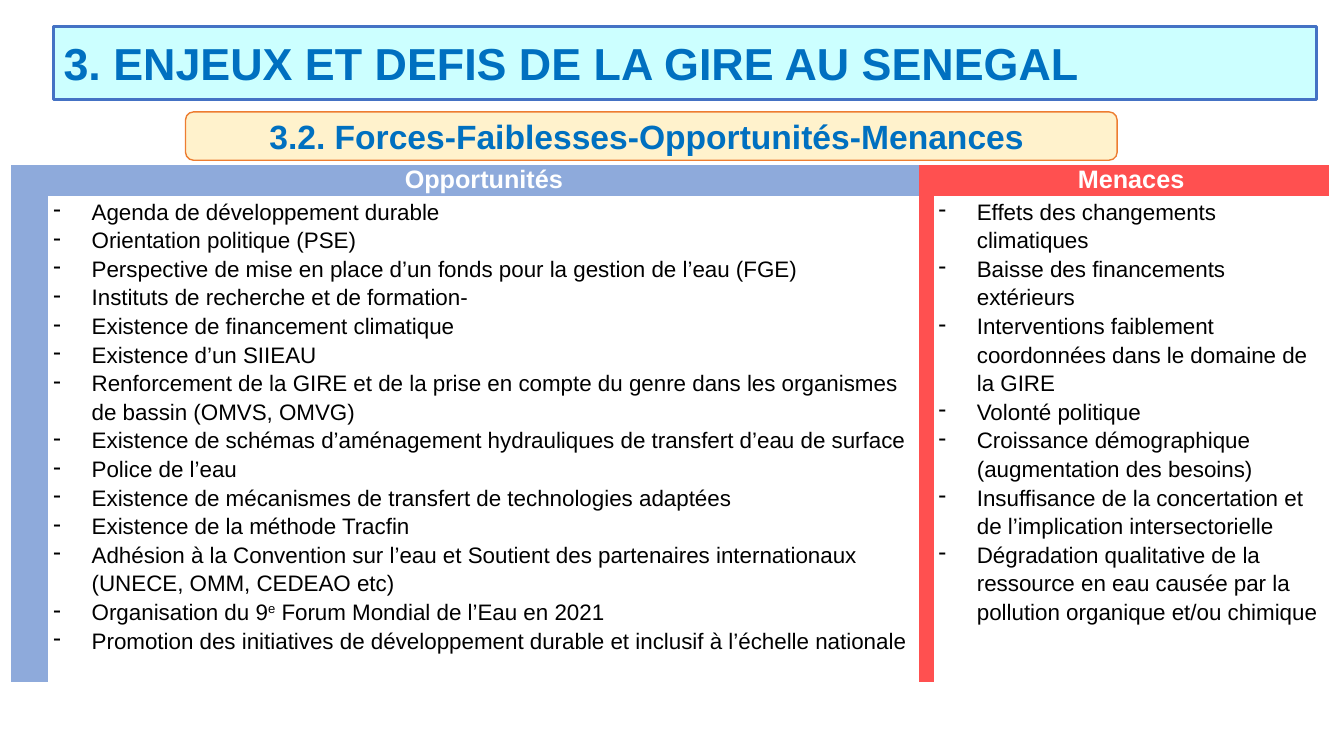
import pptx
import pptx.util
import pptx.dml.color
import pptx.enum.shapes
import pptx.enum.text
import pptx.oxml
import pptx.oxml.ns
from pptx.util import Inches

RGBColor = pptx.dml.color.RGBColor
PP_ALIGN = pptx.enum.text.PP_ALIGN
MIDDLE = pptx.enum.text.MSO_ANCHOR.MIDDLE

BLACK = RGBColor(0x00, 0x00, 0x00)
WHITE = RGBColor(0xFF, 0xFF, 0xFF)
TITLE_BLUE = RGBColor(0x00, 0x70, 0xC0)
PALE_CYAN = RGBColor(0xCC, 0xFF, 0xFF)
EDGE_BLUE = RGBColor(0x44, 0x72, 0xC4)
CREAM = RGBColor(0xFF, 0xF2, 0xCC)
ORANGE = RGBColor(0xED, 0x7D, 0x31)
OPPORTUNITY_BLUE = RGBColor(0x8E, 0xAA, 0xDB)
THREAT_RED = RGBColor(0xFF, 0x50, 0x50)

NO_STYLE = "{2D5ABB26-0587-4C30-8999-92F81FD0307C}"
COLUMN_WIDTHS = (0.37, 8.64, 0.12, 3.92)
ROW_HEIGHTS = (0.29, 4.82)

OPPORTUNITIES = (
    "Agenda de développement durable",
    "Orientation politique (PSE)",
    "Perspective de mise en place d’un fonds pour la gestion de l’eau (FGE)",
    "Instituts de recherche et de formation-",
    "Existence de financement climatique",
    "Existence d’un SIIEAU",
    "Renforcement de la GIRE et de la prise en compte du genre dans les organismes de bassin (OMVS, OMVG)",
    "Existence de schémas d’aménagement hydrauliques de transfert d’eau de surface",
    "Police de l’eau",
    "Existence de mécanismes de transfert de technologies adaptées",
    "Existence de la méthode Tracfin",
    "Adhésion à la Convention sur l’eau et Soutient des partenaires internationaux (UNECE, OMM, CEDEAO etc)",
    ("Organisation du 9", "e", " Forum Mondial de l’Eau en 2021"),
    "Promotion des initiatives de développement durable et inclusif à l’échelle nationale",
)
THREATS = (
    "Effets des changements climatiques",
    "Baisse des financements extérieurs",
    "Interventions faiblement coordonnées dans le domaine de la GIRE",
    "Volonté politique",
    "Croissance démographique (augmentation des besoins)",
    "Insuffisance de la concertation et de l’implication intersectorielle",
    "Dégradation qualitative de la ressource en eau causée par la pollution organique et/ou chimique",
)


def format_font(font, size, color, bold):
    """Apply the slide's typeface with a size, colour and weight."""
    font.name = "Arial"
    font.size = pptx.util.Pt(size)
    font.color.rgb = color
    font.bold = bold


def format_banner(sp, text, size, align, fill, edge, edge_width):
    """Fill and outline a banner and write its single line of text."""
    sp.fill.solid()
    sp.fill.fore_color.rgb = fill
    sp.line.color.rgb = edge
    sp.line.width = pptx.util.Pt(edge_width)
    tf = sp.text_frame
    tf.text = text
    tf.auto_size = pptx.enum.text.MSO_AUTO_SIZE.NONE
    tf.vertical_anchor = MIDDLE
    p = tf.paragraphs[0]
    p.alignment = align
    format_font(p.runs[0].font, size, TITLE_BLUE, True)


def add_title(s, left, top, width, height):
    """Turn the title placeholder into a pill-shaped banner."""
    sp = s.shapes.title
    sp.left, sp.top, sp.width, sp.height = map(Inches, (left, top, width, height))
    sp._element.spPr.append(pptx.oxml.parse_xml(
        f'<a:prstGeom {pptx.oxml.ns.nsdecls("a")} prst="roundRect">'
        '<a:avLst><a:gd name="adj" fmla="val 50000"/></a:avLst></a:prstGeom>'))
    format_banner(sp, "3. ENJEUX ET DEFIS DE LA GIRE AU SENEGAL", 32,
                  PP_ALIGN.LEFT, PALE_CYAN, EDGE_BLUE, 2.25)


def add_subtitle(s, left, top, width, height):
    """Add the rounded section heading."""
    sp = s.shapes.add_shape(pptx.enum.shapes.MSO_SHAPE.ROUNDED_RECTANGLE,
                            *map(Inches, (left, top, width, height)))
    sp.shadow.inherit = False
    format_banner(sp, "3.2. Forces-Faiblesses-Opportunités-Menances ", 24,
                  PP_ALIGN.CENTER, CREAM, ORANGE, 1)
    sp.text_frame.word_wrap = False


def fill_heading(cell, text):
    """Write a centred column heading."""
    cell.text = text
    p = cell.text_frame.paragraphs[0]
    p.alignment = PP_ALIGN.CENTER
    format_font(p.runs[0].font, 18, WHITE, True)


def fill_list(cell, items):
    """Write a dashed list; the middle part of a split item is superscript."""
    tf = cell.text_frame
    for i, item in enumerate(items):
        p = tf.add_paragraph() if i else tf.paragraphs[0]
        p.line_spacing = 1.15
        pPr = p._p.get_or_add_pPr()
        pPr.set("marL", str(Inches(0.38)))
        pPr.set("indent", str(Inches(-0.38)))
        pPr.append(pptx.oxml.parse_xml(
            f'<a:buChar {pptx.oxml.ns.nsdecls("a")} char="-"/>'))
        parts = (item,) if isinstance(item, str) else item
        for j, part in enumerate(parts):
            r = p.add_run()
            r.text = part
            format_font(r.font, 16, BLACK, False)
            if j == 1:
                r._r.get_or_add_rPr().set("baseline", "30000")


def add_swot_table(s, left, top):
    """Add the table of opportunities and threats with coloured side bars."""
    frame = s.shapes.add_table(
        len(ROW_HEIGHTS), len(COLUMN_WIDTHS), Inches(left), Inches(top),
        Inches(sum(COLUMN_WIDTHS)), Inches(sum(ROW_HEIGHTS)))
    table = frame.table
    table.first_row = table.horz_banding = False
    table._tbl.tblPr.find(pptx.oxml.ns.qn("a:tableStyleId")).text = NO_STYLE
    for column, width in zip(table.columns, COLUMN_WIDTHS):
        column.width = Inches(width)
    for row, height in zip(table.rows, ROW_HEIGHTS):
        row.height = Inches(height)
    for cell in table.iter_cells():
        cell.margin_left = cell.margin_right = Inches(0.05)
        cell.margin_top = cell.margin_bottom = 0

    sections = (("Opportunités", OPPORTUNITIES, OPPORTUNITY_BLUE),
                ("Menaces", THREATS, THREAT_RED))
    for i, (heading, items, color) in enumerate(sections):
        bar, text = 2 * i, 2 * i + 1
        for row, col in ((0, bar), (0, text), (1, bar)):
            fill = table.cell(row, col).fill
            fill.solid()
            fill.fore_color.rgb = color
        table.cell(1, text).fill.background()
        fill_heading(table.cell(0, text), heading)
        fill_list(table.cell(1, text), items)


def main():
    """Build and save the slide."""
    prs = pptx.Presentation()
    prs.slide_width = Inches(13.33)
    prs.slide_height = Inches(7.5)
    s = prs.slides.add_slide(prs.slide_layouts[5])
    add_title(s, 0.53, 0.26, 12.53, 0.73)
    add_subtitle(s, 1.84, 1.11, 9.24, 0.48)
    add_swot_table(s, 0.11, 1.64)
    prs.save("out.pptx")


if __name__ == "__main__":
    main()
